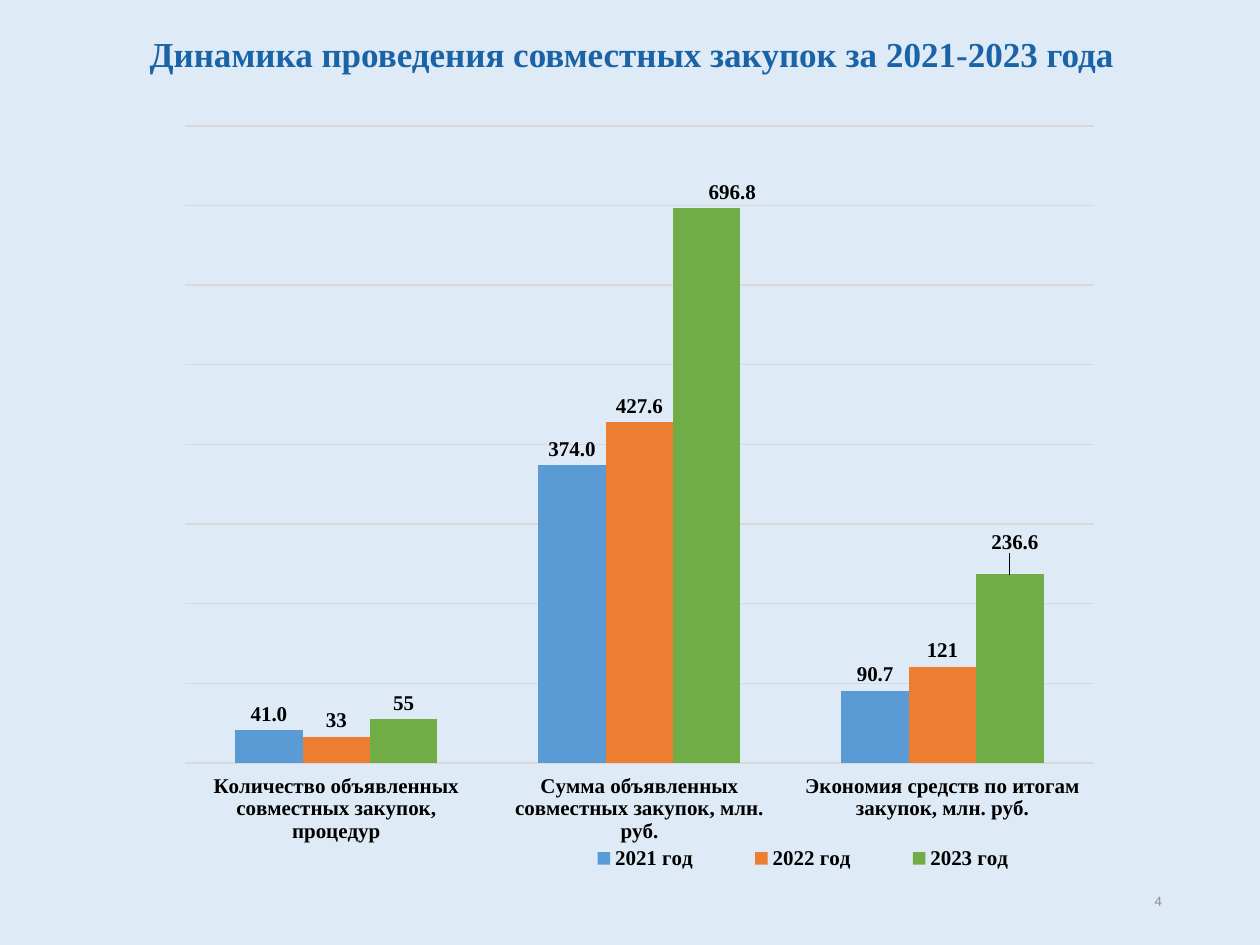
from lxml import etree
from pptx import Presentation
from pptx.chart.data import CategoryChartData
from pptx.dml.color import RGBColor
from pptx.enum.chart import XL_CHART_TYPE as CT, XL_LABEL_POSITION as LP
from pptx.enum.chart import XL_LEGEND_POSITION as LEG, XL_TICK_LABEL_POSITION as TLP, XL_TICK_MARK as TM
from pptx.enum.text import MSO_ANCHOR as ANCHOR, MSO_AUTO_SIZE as AUTO, PP_ALIGN as ALIGN
from pptx.oxml.ns import qn
from pptx.util import Inches, Pt

BACK = RGBColor(0xDE, 0xEB, 0xF7)
TITLE = RGBColor(0x1A, 0x63, 0xA6)
BLACK = RGBColor(0, 0, 0)
GREY = RGBColor(0x8C, 0x8C, 0x8C)
GRID = RGBColor(0xD9, 0xD9, 0xD9)
BLUE = RGBColor(0x5B, 0x9B, 0xD5)
ORANGE = RGBColor(0xED, 0x7D, 0x31)
GREEN = RGBColor(0x70, 0xAD, 0x47)
SERIF = "Times New Roman"

HEADING = "Динамика проведения совместных закупок за 2021-2023 года"
PAGE = "4"
CATEGORIES = [
    "Количество объявленных совместных закупок, процедур",
    "Сумма объявленных совместных закупок, млн. руб.",
    "Экономия средств по итогам закупок, млн. руб.",
]
SERIES = [
    ("2021 год", (41, 374, 90.7), BLUE, "0.0", {}),
    ("2022 год", (33, 427.6, 121), ORANGE, "General", {}),
    ("2023 год", (55, 696.8, 236.6), GREEN, "General", {1: (0.025, 0), 2: (0.005, -0.02)}),
]
PLOT_AREA = {"layoutTarget": "inner", "xMode": "edge", "yMode": "edge",
             "x": 0.06, "y": 0.03, "w": 0.89, "h": 0.8}
LEGEND_AREA = {"xMode": "edge", "yMode": "edge", "x": 0.41, "y": 0.92, "w": 0.51, "h": 0.06}


def style_font(font, size=12, color=BLACK, name=SERIF, bold=True):
    font.size, font.name, font.bold = Pt(size), name, bold
    font.color.rgb = color


def set_text(sp, text, align=ALIGN.LEFT, anchor=ANCHOR.TOP, auto=AUTO.NONE, **fmt):
    tf = sp.text_frame
    tf.word_wrap, tf.auto_size, tf.vertical_anchor = True, auto, anchor
    p = tf.paragraphs[0]
    p.alignment = align
    r = p.add_run()
    r.text = text
    style_font(r.font, **fmt)


def set_layout(parent, index, area):
    for old in parent.findall(qn("c:layout")):
        parent.remove(old)
    layout = etree.Element(qn("c:layout"))
    manual = etree.SubElement(layout, qn("c:manualLayout"))
    for tag, val in area.items():
        etree.SubElement(manual, qn("c:" + tag)).set("val", str(val))
    parent.insert(index, layout)


def format_series(series, color, number_format, offsets):
    series.format.fill.solid()
    series.format.fill.fore_color.rgb = color
    labels = series.data_labels
    labels.show_value = True
    labels.number_format, labels.number_format_is_linked = number_format, False
    labels.position = LP.OUTSIDE_END
    style_font(labels.font)
    for i, (dx, dy) in offsets.items():
        label = series.points[i].data_label
        label.position = LP.OUTSIDE_END
        style_font(label.font)
        node = series._element.xpath(f"c:dLbls/c:dLbl[c:idx/@val='{i}']")[0]
        set_layout(node, 1, {"x": dx, "y": dy})


def add_column_chart(slide):
    data = CategoryChartData()
    data.categories = CATEGORIES
    for name, values, *_ in SERIES:
        data.add_series(name, values)
    box = [Inches(v) for v in (0.98, 0.81, 8.11, 6.32)]
    chart = slide.shapes.add_chart(CT.COLUMN_CLUSTERED, *box, data).chart
    style_font(chart.font, size=10, name="Calibri", bold=False)
    chart.has_title = False
    plot = chart.plots[0]
    plot.gap_width, plot.overlap, plot.vary_by_categories = 150, 0, False
    for series, (_, _, color, number_format, offsets) in zip(plot.series, SERIES):
        format_series(series, color, number_format, offsets)

    cat = chart.category_axis
    cat.major_tick_mark = cat.minor_tick_mark = TM.NONE
    cat.tick_label_position = TLP.LOW
    cat.format.line.fill.background()
    style_font(cat.tick_labels.font)

    val = chart.value_axis
    val.visible = False
    val.minimum_scale, val.maximum_scale, val.major_unit = 0, 800, 100
    val.has_major_gridlines = True
    line = val.major_gridlines.format.line
    line.color.rgb, line.width = GRID, Pt(0.75)
    val.tick_labels.number_format, val.tick_labels.number_format_is_linked = "0.0", False

    chart.has_legend = True
    legend = chart.legend
    legend.position, legend.include_in_layout = LEG.BOTTOM, False
    style_font(legend.font)
    set_layout(legend._element, 1, LEGEND_AREA)
    set_layout(plot._element.getparent(), 0, PLOT_AREA)


def main():
    prs = Presentation()
    prs.slide_width, prs.slide_height = Inches(10), Inches(7.5)
    slide = prs.slides.add_slide(prs.slide_layouts[5])
    slide.background.fill.solid()
    slide.background.fill.fore_color.rgb = BACK

    title = slide.shapes.title
    title.left, title.top, title.width, title.height = [Inches(v) for v in (0.83, 0.21, 8.37, 0.44)]
    title.fill.solid()
    title.fill.fore_color.rgb = BACK
    set_text(title, HEADING, align=ALIGN.CENTER, auto=AUTO.SHAPE_TO_FIT_TEXT, size=20, color=TITLE)

    number = slide.shapes.add_textbox(Inches(7.07), Inches(6.95), Inches(2.25), Inches(0.4))
    set_text(number, PAGE, align=ALIGN.RIGHT, anchor=ANCHOR.MIDDLE,
             size=8.2, color=GREY, name="Calibri", bold=False)
    add_column_chart(slide)
    prs.save("out.pptx")


if __name__ == "__main__":
    main()
